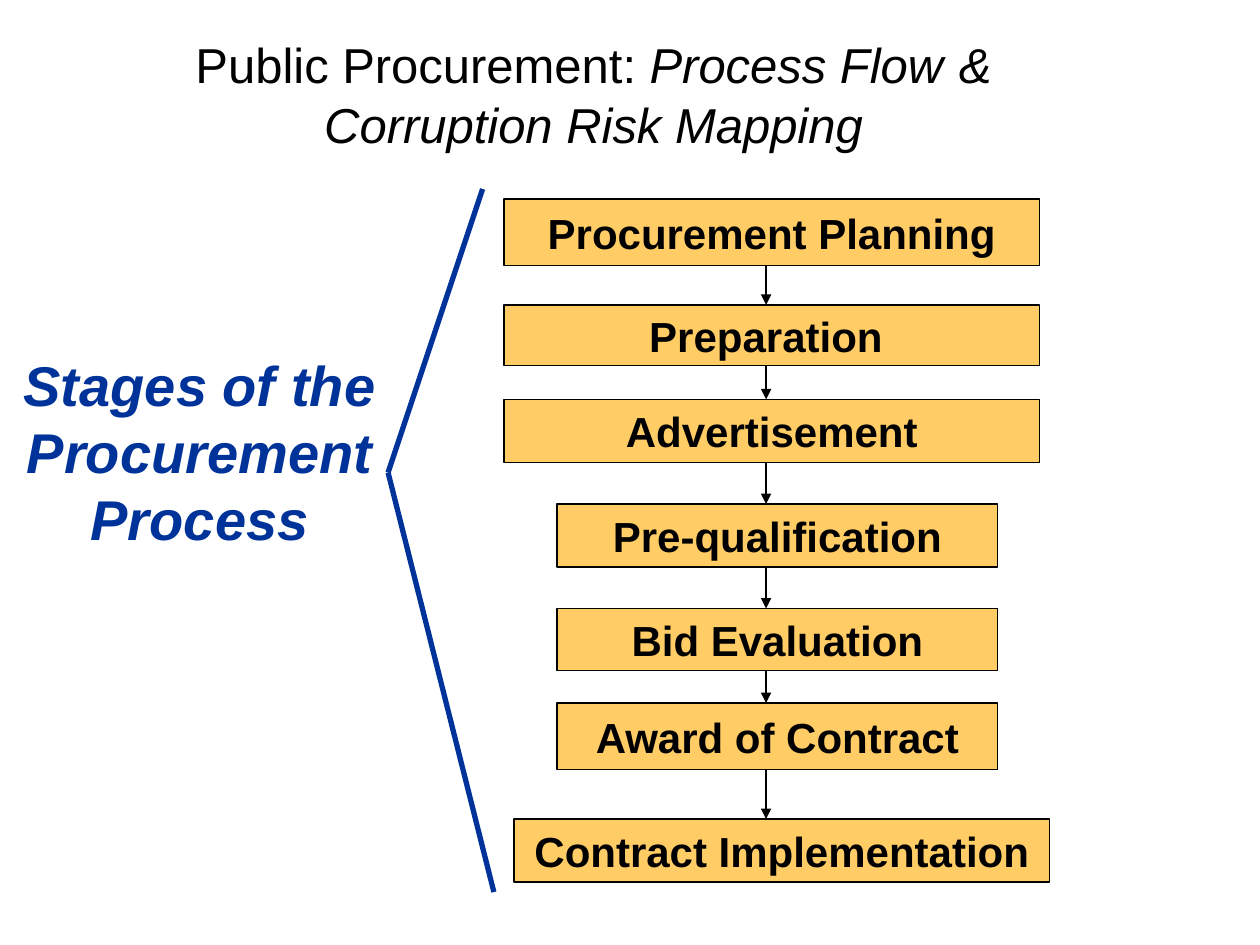
from pptx import Presentation
from pptx.dml.color import RGBColor
from pptx.enum.shapes import MSO_CONNECTOR, MSO_SHAPE
from pptx.enum.text import MSO_ANCHOR, PP_ALIGN
from pptx.oxml.ns import qn
from pptx.util import Pt
from lxml.etree import SubElement

SCALE = 9144
BLACK, BLUE, GOLD = "000000", "003399", "FFCC66"
AXIS = 608
STAGES = [
    ("Procurement Planning", 400, 158, 425, 53),
    ("Preparation ", 400, 242, 425, 48),
    ("Advertisement", 400, 317, 425, 50),
    ("Pre-qualification", 442, 400, 350, 50),
    ("Bid Evaluation", 442, 483, 350, 49),
    ("Award of Contract", 442, 558, 350, 53),
    ("Contract Implementation", 408, 650, 425, 50),
]


def px(*sizes):
    return [size * SCALE for size in sizes]


def color(code):
    return RGBColor.from_string(code)


class Canvas:
    """Draws styled elements on the current slide."""

    def __init__(self, slide, font="Arial"):
        self.slide = slide
        self.font = font

    def style(self, run, size, tone=BLACK, bold=False, italic=False):
        font = run.font
        font.name = self.font
        font.size = Pt(size)
        font.bold = bold
        font.italic = italic
        font.color.rgb = color(tone)

    def label(self, area, lines, anchor, tone=BLACK, bold=False):
        frame = self.slide.shapes.add_textbox(*px(*area)).text_frame
        frame.word_wrap = True
        frame.vertical_anchor = anchor
        for index, parts in enumerate(lines):
            para = frame.add_paragraph() if index else frame.paragraphs[0]
            para.alignment = PP_ALIGN.CENTER
            for text, size, italic in parts:
                run = para.add_run()
                run.text = text
                self.style(run, size, tone, bold, italic)

    def box(self, text, *area):
        shape = self.slide.shapes.add_shape(MSO_SHAPE.RECTANGLE, *px(*area))
        shape.shadow.inherit = False
        shape.fill.solid()
        shape.fill.fore_color.rgb = color(GOLD)
        shape.line.color.rgb = color(BLACK)
        shape.line.width = Pt(0.75)
        frame = shape.text_frame
        frame.word_wrap = False
        frame.vertical_anchor = MSO_ANCHOR.MIDDLE
        frame.text = text
        para = frame.paragraphs[0]
        para.alignment = PP_ALIGN.CENTER
        self.style(para.runs[0], 24, bold=True)

    def line(self, ends, tone=BLACK, width=0.75, arrow=False):
        link = self.slide.shapes.add_connector(MSO_CONNECTOR.STRAIGHT, *px(*ends))
        link.line.color.rgb = color(tone)
        link.line.width = Pt(width)
        if arrow:
            stroke = link.line._get_or_add_ln()
            SubElement(stroke, qn("a:tailEnd"), type="triangle")
        SubElement(link._element.spPr, qn("a:effectLst"))


def main():
    deck = Presentation()
    deck.slide_width, deck.slide_height = px(1000, 750)
    canvas = Canvas(deck.slides.add_slide(deck.slide_layouts[6]))

    title = [
        [("Public Procurement: ", 28, False), ("Process Flow", 28, True),
         (" ", 32, True), ("&", 28, True)],
        [("Corruption Risk Mapping", 28, True)],
    ]
    canvas.label((25, 17, 892, 110), title, MSO_ANCHOR.TOP)
    heading = [[("Stages of the Procurement Process", 32, True)]]
    canvas.label((-8, 258, 333, 200), heading, MSO_ANCHOR.MIDDLE, BLUE, True)

    start = None
    for text, left, top, width, height in STAGES:
        if start:
            canvas.line((AXIS, start, AXIS, top), arrow=True)
        canvas.box(text, left, top, width, height)
        start = top + height

    for end in ((383, 150), (392, 708)):
        canvas.line((308, 375, *end), BLUE, 3)

    deck.save("out.pptx")


if __name__ == "__main__":
    main()
